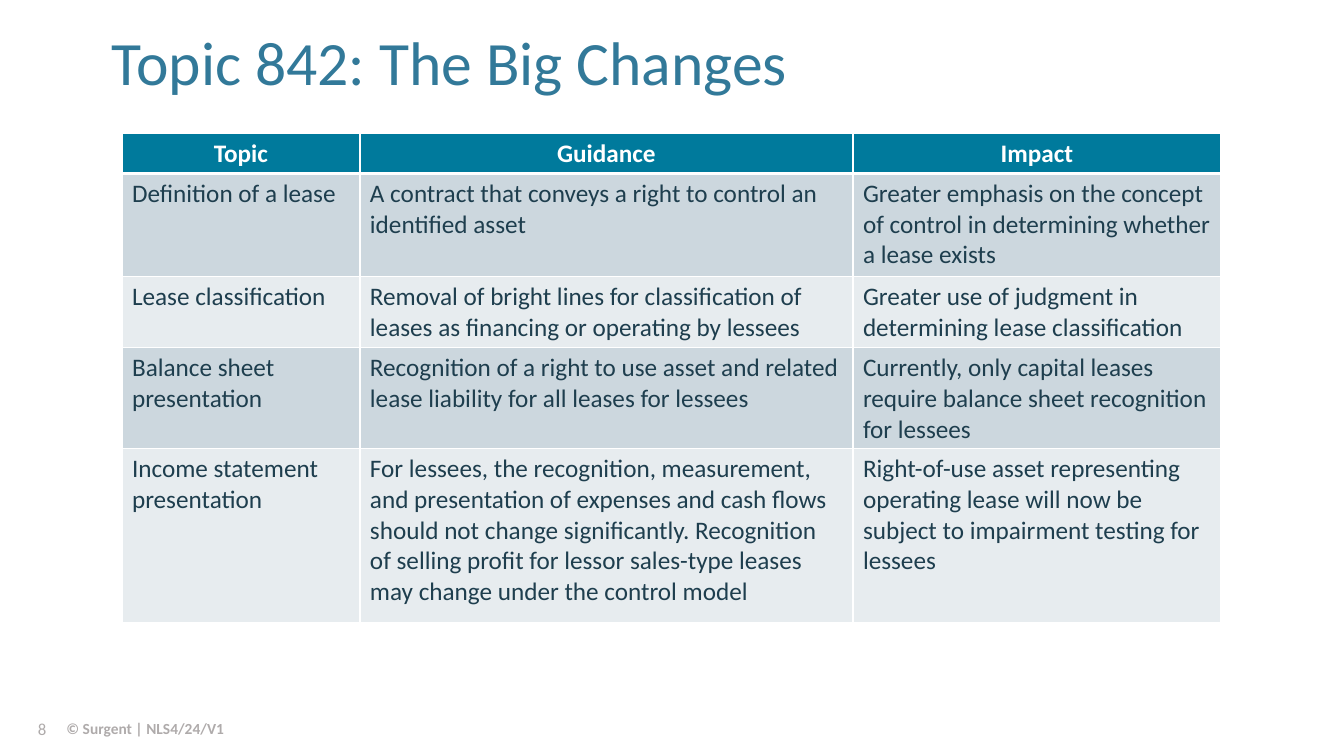
import pptx
import pptx.dml.color
import pptx.enum.text
import pptx.oxml
import pptx.oxml.ns
import pptx.util
from pptx.dml.color import RGBColor
from pptx.enum.text import MSO_ANCHOR, PP_ALIGN
from pptx.util import Inches, Pt

# Content
TITLE = "Topic 842: The Big Changes"
FOOTER = "© Surgent | NLS4/24/V1"
PAGE_NUMBER = "8"
ROWS = [
    ("Topic", "Guidance", "Impact"),
    ("Definition of a lease",
     "A contract that conveys a right to control an identified asset",
     "Greater emphasis on the concept of control in determining whether a lease exists"),
    ("Lease classification",
     "Removal of bright lines for classification of leases as financing or operating by lessees",
     "Greater use of judgment in\ndetermining lease classification"),
    ("Balance sheet presentation",
     "Recognition of a right to use asset and related lease liability for all leases for lessees",
     "Currently, only capital leases\nrequire balance sheet recognition for lessees"),
    ("Income statement presentation",
     "For lessees, the recognition, measurement, and presentation of expenses and cash flows "
     "should not change significantly. Recognition of selling profit for lessor sales-type "
     "leases may change under the control model",
     "Right-of-use asset representing\noperating lease will now be\n"
     "subject to impairment testing for lessees"),
]
COLUMN_WIDTHS = (2.36, 4.89, 3.65)
ROW_HEIGHTS = (0.39, 1.02, 0.71, 0.97, 1.73)

# Style
FONT = "Calibri"
WHITE = RGBColor(0xFF, 0xFF, 0xFF)
TITLE_BLUE = RGBColor(0x32, 0x79, 0x99)
HEADER_TEAL = RGBColor(0x00, 0x7A, 0x9C)
BODY_NAVY = RGBColor(0x1E, 0x3E, 0x4E)
BAND_DARK = RGBColor(0xCC, 0xD7, 0xDE)
BAND_LIGHT = RGBColor(0xE7, 0xEC, 0xEF)
FOOTER_GRAY = RGBColor(0xAF, 0xAB, 0xAB)


def format_text(frame, size, color, bold=False, align=PP_ALIGN.LEFT):
    for para in frame.paragraphs:
        para.alignment = align
        for span in para.runs:
            span.font.name = FONT
            span.font.size = Pt(size)
            span.font.bold = bold
            span.font.color.rgb = color


def add_text(page, text, place, size, color, **style):
    box = page.shapes.add_textbox(*(Inches(length) for length in place))
    frame = box.text_frame
    frame.word_wrap = True
    frame.vertical_anchor = MSO_ANCHOR.MIDDLE
    frame.text = text
    format_text(frame, size, color, **style)
    return frame


def set_borders(cell, widths):
    properties = cell._tc.get_or_add_tcPr()
    for index, (side, width) in enumerate(widths.items()):
        properties.insert(index, pptx.oxml.parse_xml(
            f'<a:ln{side} {pptx.oxml.ns.nsdecls("a")} w="{Pt(width)}">'
            f'<a:solidFill><a:srgbClr val="{WHITE}"/></a:solidFill></a:ln{side}>'))


def add_changes_table(page):
    table = page.shapes.add_table(
        len(ROWS), len(COLUMN_WIDTHS), Inches(1.21), Inches(1.32),
        Inches(sum(COLUMN_WIDTHS)), Inches(sum(ROW_HEIGHTS))).table
    for column, width in zip(table.columns, COLUMN_WIDTHS):
        column.width = Inches(width)
    for row, height in zip(table.rows, ROW_HEIGHTS):
        row.height = Inches(height)

    for row_index, texts in enumerate(ROWS):
        header = row_index == 0
        band = BAND_DARK if row_index % 2 else BAND_LIGHT
        for column_index, text in enumerate(texts):
            cell = table.cell(row_index, column_index)
            cell.text_frame.text = text
            cell.fill.solid()
            cell.fill.fore_color.rgb = HEADER_TEAL if header else band
            format_text(cell.text_frame, 18, WHITE if header else BODY_NAVY, bold=header,
                        align=PP_ALIGN.CENTER if header else PP_ALIGN.LEFT)
            set_borders(cell, {"L": 1, "R": 1, "T": 3 if row_index == 1 else 1,
                               "B": 3 if header else 1})


def main():
    deck = pptx.Presentation()
    deck.slide_width, deck.slide_height = Inches(13.33), Inches(7.5)
    page = deck.slides.add_slide(deck.slide_layouts[6])

    # Title
    title = add_text(page, TITLE, (1.01, 0.37, 11.75, 0.62), 44, TITLE_BLUE)
    title.paragraphs[0].line_spacing = 0.75

    # Table of changes
    add_changes_table(page)

    # Footer
    add_text(page, FOOTER, (0.56, 7.03, 2.11, 0.4), 11, FOOTER_GRAY, bold=True)
    add_text(page, PAGE_NUMBER, (0, 7.03, 0.56, 0.4), 12, FOOTER_GRAY, align=PP_ALIGN.RIGHT)

    deck.save("out.pptx")


if __name__ == "__main__":
    main()
